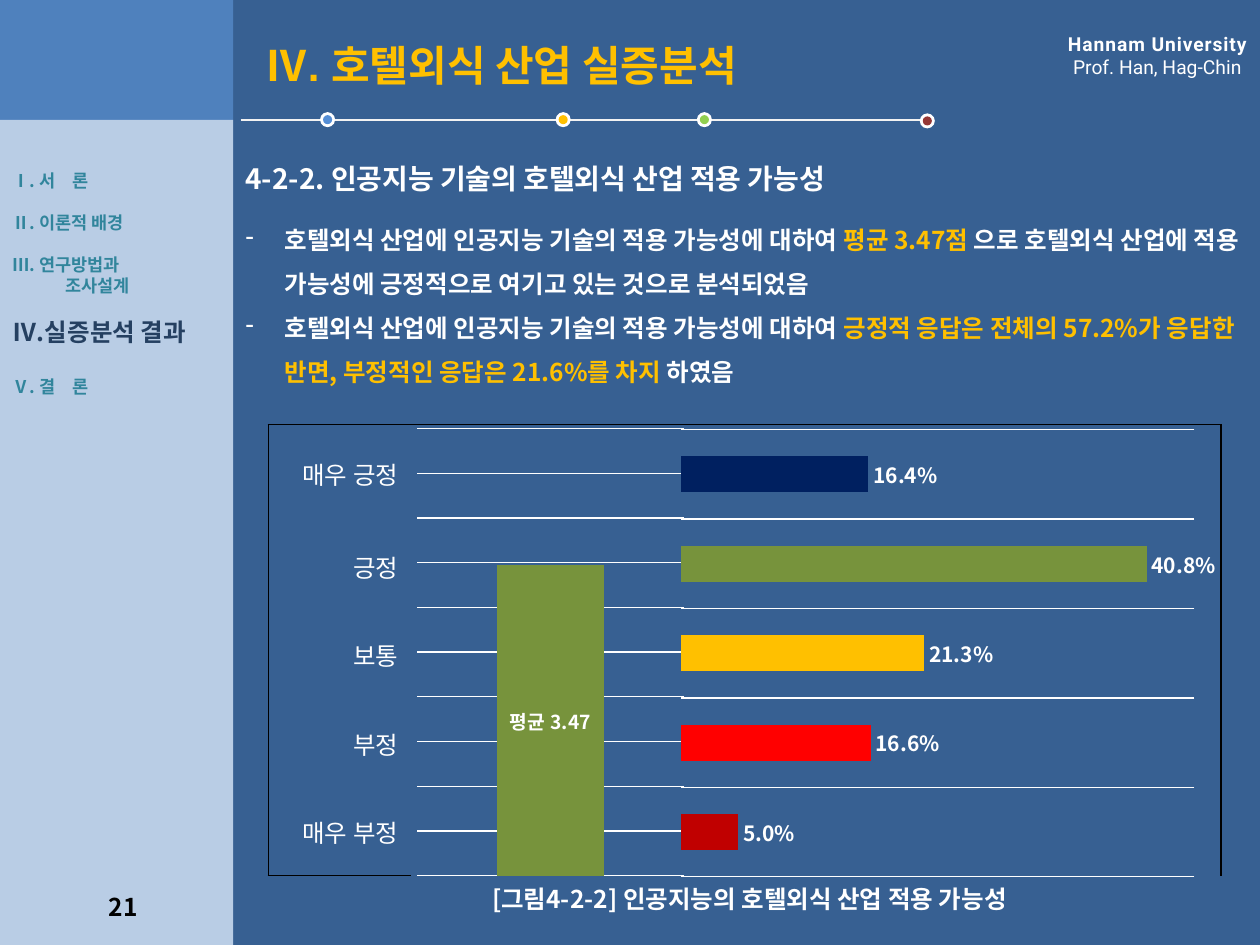
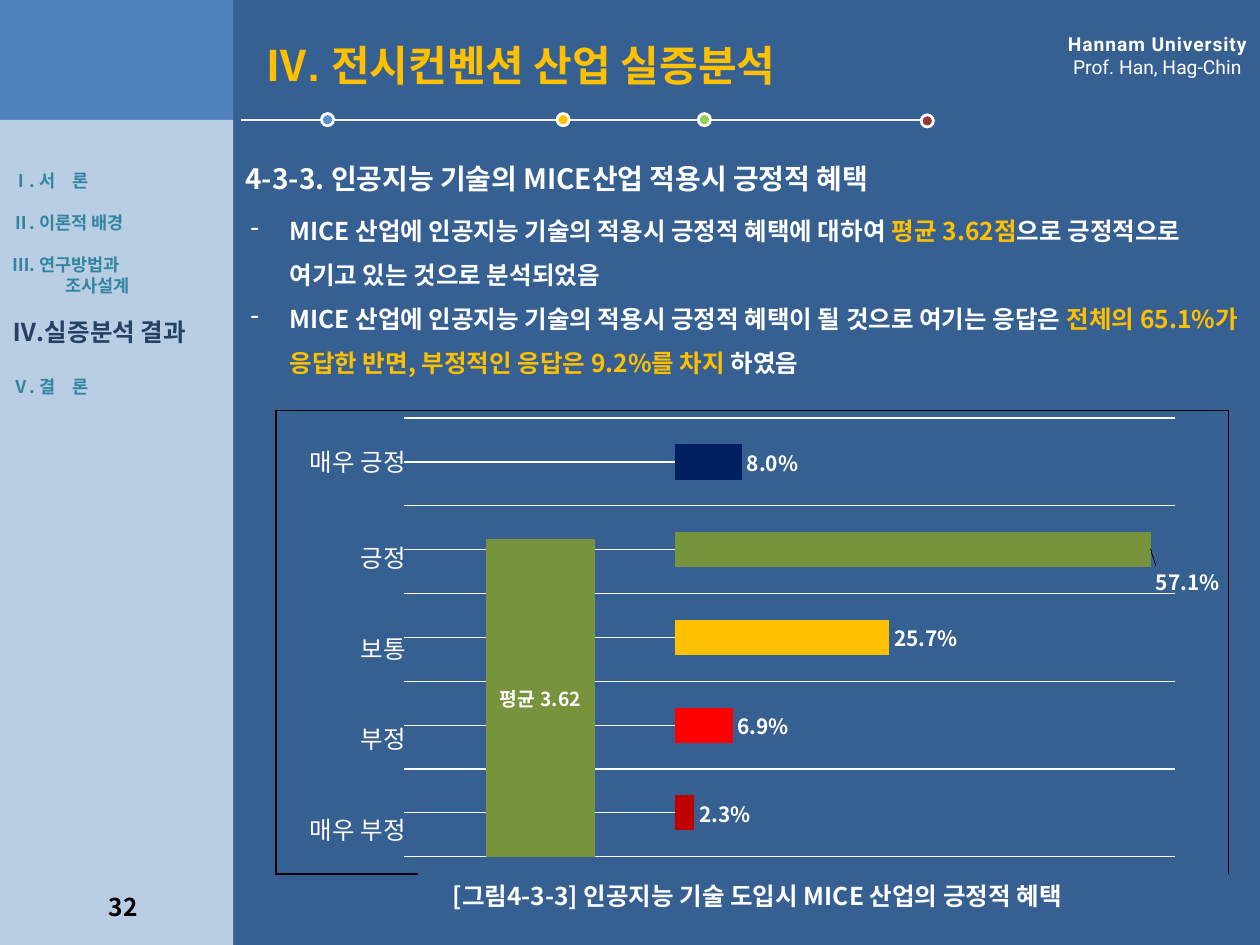
from lxml.etree import SubElement
from pptx import Presentation
from pptx.chart.data import CategoryChartData
from pptx.dml.color import RGBColor
from pptx.enum.chart import XL_CHART_TYPE, XL_LABEL_POSITION
from pptx.enum.shapes import MSO_CONNECTOR, MSO_SHAPE
from pptx.enum.text import MSO_ANCHOR, MSO_AUTO_SIZE, PP_ALIGN
from pptx.oxml import parse_xml
from pptx.oxml.ns import nsdecls, qn
from pptx.util import Pt

WHITE = RGBColor(0xFF, 0xFF, 0xFF)
BLACK = RGBColor(0, 0, 0)
PANEL = RGBColor(0x37, 0x60, 0x92)
CORNER = RGBColor(0x4F, 0x81, 0xBD)
SIDEBAR = RGBColor(0xB9, 0xCD, 0xE5)
RULE = RGBColor(0xF2, 0xF2, 0xF2)
GOLD = RGBColor(0xFF, 0xC0, 0x00)
TEAL = RGBColor(0x31, 0x85, 0x9C)
NAVY = RGBColor(0x25, 0x40, 0x61)
BLUE_DOT = RGBColor(0x55, 0x8E, 0xD5)
GREEN_DOT = RGBColor(0x92, 0xD0, 0x50)
RED_DOT = RGBColor(0x95, 0x37, 0x35)
OLIVE = RGBColor(0x77, 0x93, 0x3C)
ANSWER_COLORS = (RGBColor(0xC0, 0, 0), RGBColor(0xFF, 0, 0), GOLD, OLIVE,
                 RGBColor(0, 0x20, 0x60))
ANSWERS = ("매우 긍정", "긍정", "보통", "부정", "매우 부정")
# text, size, colour, space before, left margin, first-line indent
AGENDA = (
    ("Ⅰ. 서　론", 10, TEAL, 0, 27.4, -27.4),
    ("Ⅱ. 이론적 배경", 10, TEAL, 12, 27.4, -27.4),
    ("Ⅲ. 연구방법과", 10, TEAL, 12, 27.4, -27.4),
    ("조사설계", 10, TEAL, 0, 30.5, 0),
    ("Ⅳ.실증분석 결과", 14, NAVY, 12, 27.4, -27.4),
    ("Ⅴ. 결　론", 10, TEAL, 17, 27.4, -27.4),
)
DOTS = ((187.2, 68.4, BLUE_DOT), (321.8, 68.4, GOLD),
        (402.5, 68.4, GREEN_DOT), (529.9, 69.1, RED_DOT))
KOREAN_FONT = "Noto Sans CJK KR"
NO_GRID_STYLE = "{2D5ABB26-0587-4C30-8999-92F81FD0307C}"

SLIDES = (
    dict(
        number="21", title="호텔외식 산업 실증분석",
        heading="4-2-2. 인공지능 기술의 호텔외식 산업 적용 가능성",
        body_box=(133.2, 116.6, 586.8, 113),
        body=(
            ("호텔외식 산업에 인공지능 기술의 적용 가능성에 대하여 ", "평균 3.47점 ",
             "으로 호텔외식 산업에 적용 가능성에 긍정적으로 여기고 있는 것으로 분석되었음"),
            ("호텔외식 산업에 인공지능 기술의 적용 가능성에 대하여 ",
             "긍정적 응답은 전체의 57.2%가 응답한 반면, 부정적인 응답은 21.6%를 차지 ",
             "하였음")),
        table_at=(153.4, 242.6), rows=(56.2, 50.4),
        mean=3.47, mean_box=(235.4, 239.8, 159.1, 265.7),
        shares=(0.05, 0.166, 0.213, 0.408, 0.164), share_maximum=0.45,
        share_box=(383.8, 240.5, 311, 265.7), share_width=0.943,
        lowered_label=None,
        caption="[그림4-2-2] 인공지능의 호텔외식 산업 적용 가능성",
        caption_at=(156.2, 502.6)),
    dict(
        number="32", title="전시컨벤션 산업 실증분석",
        heading="4-3-3. 인공지능 기술의 MICE산업 적용시 긍정적 혜택",
        body_box=(136.1, 111.6, 583.9, 118.8),
        body=(
            ("MICE 산업에 인공지능 기술의 적용시 긍정적 혜택에 대하여 ", "평균 3.62점",
             "으로 긍정적으로 여기고 있는 것으로 분석되었음"),
            ("MICE 산업에 인공지능 기술의 적용시 긍정적 혜택이 될 것으로 여기는 응답은 ",
             "전체의 65.1%가 응답한 반면, 부정적인 응답은 9.2%를 차지 ", "하였음")),
        table_at=(157.7, 234.7), rows=(57.6, 51.8),
        mean=3.62, mean_box=(228.2, 234, 162, 260.6),
        shares=(0.023, 0.069, 0.257, 0.571, 0.08), share_maximum=0.6,
        share_box=(380.2, 234, 316.8, 260.6), share_width=0.909,
        lowered_label=3,
        caption="[그림4-3-3] 인공지능 기술 도입시 MICE 산업의 긍정적 혜택",
        caption_at=(160.6, 500.4)),
)


def points(values):
    return [Pt(value) for value in values]


def manual_layout(fields):
    """Chart layout element; fields are (tag, value) pairs in schema order."""
    inner = "".join(f'<c:{tag} val="{value}"/>' for tag, value in fields)
    return parse_xml(f'<c:layout {nsdecls("c")}><c:manualLayout>{inner}'
                     '</c:manualLayout></c:layout>')


class Deck:
    def __init__(self):
        self.presentation = Presentation()
        self.presentation.slide_width = Pt(720)
        self.presentation.slide_height = Pt(540)
        self.slide = None

    def new_slide(self):
        self.slide = self.presentation.slides.add_slide(
            self.presentation.slide_layouts[5])

    def shape(self, kind, box, color):
        shape = self.slide.shapes.add_shape(kind, *points(box))
        shape.shadow.inherit = False
        shape.fill.solid()
        shape.fill.fore_color.rgb = color
        shape.line.fill.background()

    def run(self, paragraph, text, size, color, bold=True, font=KOREAN_FONT):
        run = paragraph.add_run()
        run.text = text
        run.font.size = Pt(size)
        run.font.bold = bold
        run.font.color.rgb = color
        run.font.name = font
        properties = run.font._element
        SubElement(properties, qn("a:ea")).set("typeface", font)
        return run

    def text_box(self, box, anchor=MSO_ANCHOR.TOP):
        frame = self.slide.shapes.add_textbox(*points(box)).text_frame
        frame.word_wrap = True
        frame.vertical_anchor = anchor
        return frame

    def line_of_text(self, box, text, size, color, align=PP_ALIGN.LEFT,
                     anchor=MSO_ANCHOR.TOP):
        paragraph = self.text_box(box, anchor).paragraphs[0]
        paragraph.alignment = align
        self.run(paragraph, text, size, color)

    def indent(self, paragraph, left, first):
        properties = paragraph._p.get_or_add_pPr()
        properties.set("marL", str(Pt(left)))
        properties.set("indent", str(Pt(first)))
        return properties

    def paragraph(self, frame, index):
        return frame.add_paragraph() if index else frame.paragraphs[0]

    def frame(self, number):
        """Panels, sidebar agenda, dotted rule, header and page number."""
        self.shape(MSO_SHAPE.RECTANGLE, (133.2, 0, 586.8, 540), PANEL)
        self.shape(MSO_SHAPE.RECTANGLE, (0, 0, 133.2, 68.6), CORNER)
        self.shape(MSO_SHAPE.RECTANGLE, (0, 68.6, 133.2, 471.4), SIDEBAR)
        self.line_of_text((50.4, 506.2, 40.3, 22.3), number, 14, BLACK,
                          PP_ALIGN.CENTER)
        header = self.text_box((584, 15.1, 154.8, 33.8))
        for index, (text, bold) in enumerate(
                (("Hannam University", True), ("Prof. Han, Hag-Chin", False))):
            paragraph = self.paragraph(header, index)
            paragraph.alignment = PP_ALIGN.CENTER
            run = self.run(paragraph, text, 11, WHITE, bold, "Roboto")
            if bold:
                run.font._element.set("spc", "50")
        rule = self.slide.shapes.add_connector(
            MSO_CONNECTOR.STRAIGHT, *points((137.5, 68.4, 528.5, 68.4)))
        rule.line.color.rgb = RULE
        rule.line.width = Pt(1.25)
        SubElement(rule._element.spPr, qn("a:effectLst"))
        for x, y, color in DOTS:
            for size, fill in ((8.6, WHITE), (5.2, color)):
                self.shape(MSO_SHAPE.OVAL,
                           (x - size / 2, y - size / 2, size, size), fill)
        agenda = self.text_box((0, 71.3, 133.2, 181.4), MSO_ANCHOR.MIDDLE)
        for index, (text, size, color, before, left, first) in enumerate(AGENDA):
            paragraph = self.paragraph(agenda, index)
            self.indent(paragraph, left, first)
            if before:
                paragraph.space_before = Pt(before)
            self.run(paragraph, text, size, color)

    def title(self, text):
        title = self.slide.shapes.title
        title.left, title.top, title.width, title.height = points(
            (144.7, 18.7, 391, 36))
        self.slide.shapes._spTree.append(title._element)  # above the panel
        frame = title.text_frame
        frame.auto_size = MSO_AUTO_SIZE.NONE
        frame.vertical_anchor = MSO_ANCHOR.TOP
        paragraph = frame.paragraphs[0]
        paragraph.alignment = PP_ALIGN.LEFT
        for part, font in (("Ⅳ", "Noto Sans CJK JP"), (". ", "Arial"),
                           (text, KOREAN_FONT)):
            self.run(paragraph, part, 24, GOLD, font=font)

    def findings(self, box, items):
        frame = self.text_box(box)
        for index, parts in enumerate(items):
            paragraph = self.paragraph(frame, index)
            properties = self.indent(paragraph, 22.3, -22.3)
            SubElement(properties, qn("a:buChar")).set("char", "-")
            paragraph.line_spacing = 1.5
            for part, color in zip(parts, (WHITE, GOLD, WHITE)):
                self.run(paragraph, part, 14, color)

    def border(self, cell, sides):
        properties = cell._tc.get_or_add_tcPr()
        for position, side in enumerate(sides):
            properties.insert(position, parse_xml(
                f'<a:ln{side} {nsdecls("a")} w="12700"><a:solidFill>'
                f'<a:srgbClr val="{BLACK}"/></a:solidFill></a:ln{side}>'))

    def answer_table(self, at, rows):
        first, other = rows
        columns = (81.4, 167, 295.9)
        box = (*at, sum(columns), first + 4 * other)
        table = self.slide.shapes.add_table(5, 3, *points(box)).table
        table.first_row = table.horz_banding = False
        table._tbl.tblPr.find(qn("a:tableStyleId")).text = NO_GRID_STYLE
        for column, width in zip(table.columns, columns):
            column.width = Pt(width)
        for index, answer in enumerate(ANSWERS):
            table.rows[index].height = Pt(other if index else first)
            cell = table.cell(index, 0)
            cell.vertical_anchor = MSO_ANCHOR.MIDDLE
            paragraph = cell.text_frame.paragraphs[0]
            paragraph.alignment = PP_ALIGN.RIGHT
            self.run(paragraph, answer, 14, WHITE, False)
            for column in range(3):
                cell = table.cell(index, column)
                cell.fill.background()
                sides = (("L", column == 0), ("R", column == 2),
                         ("T", index == 0), ("B", index == 4))
                self.border(cell, [side for side, outer in sides if outer])
        for column in (1, 2):
            table.cell(0, column).merge(table.cell(4, column))

    def chart(self, kind, box, name, values, colors, number_format, maximum,
              plot_width, label_size):
        data = CategoryChartData(number_format=number_format)
        data.categories = [str(index + 1) for index in range(len(values))]
        data.add_series(name, values)
        chart = self.slide.shapes.add_chart(kind, *points(box), data).chart
        chart.has_legend = chart.has_title = False
        chart.font.size = Pt(10)
        chart.font.name = KOREAN_FONT
        chart.font.color.rgb = BLACK
        chart.value_axis.minimum_scale = 0
        chart.value_axis.maximum_scale = maximum
        for axis in (chart.category_axis, chart.value_axis):
            axis.visible = False
            axis.has_major_gridlines = False
        plot = chart.plots[0]
        plot.gap_width = 150
        plot.vary_by_categories = False
        series = plot.series[0]
        for index, color in enumerate(colors):
            fill = series.points[index].format.fill
            fill.solid()
            fill.fore_color.rgb = color
        labels = series.data_labels
        labels.show_value = True
        labels.number_format = number_format
        labels.number_format_is_linked = False
        self.label_font(labels.font, label_size)
        area = chart._chartSpace.chart.plotArea
        for layout in area.findall(qn("c:layout")):
            area.remove(layout)
        area.insert(0, manual_layout((
            ("layoutTarget", "inner"), ("xMode", "edge"), ("yMode", "edge"),
            ("x", 0.018), ("y", 0.019), ("w", plot_width), ("h", 0.962))))
        return chart, series

    def label_font(self, font, size):
        font.size = Pt(size)
        font.bold = True
        font.color.rgb = WHITE
        font.name = KOREAN_FONT

    def gridlines(self, axis):
        axis.has_major_gridlines = True
        line = axis.major_gridlines.format.line
        line.color.rgb = WHITE
        line.width = Pt(0.75)

    def mean_chart(self, box, mean):
        chart, series = self.chart(
            XL_CHART_TYPE.COLUMN_CLUSTERED, box, "평균", [mean], [OLIVE],
            "General", 5, 0.96, 11)
        chart.value_axis.major_unit = 0.5
        self.gridlines(chart.value_axis)
        labels = series.data_labels
        labels.show_series_name = True
        labels.position = XL_LABEL_POSITION.CENTER
        separator = parse_xml(f'<c:separator {nsdecls("c")}> </c:separator>')
        labels._element.find(qn("c:showBubbleSize")).addnext(separator)

    def share_chart(self, box, shares, maximum, plot_width, lowered_label):
        chart, series = self.chart(
            XL_CHART_TYPE.BAR_CLUSTERED, box, "Series 1", shares,
            ANSWER_COLORS, "0.0%", maximum, plot_width, 12)
        self.gridlines(chart.category_axis)
        series.data_labels.position = XL_LABEL_POSITION.OUTSIDE_END
        if lowered_label is not None:
            label = series.points[lowered_label].data_label
            self.label_font(label.font, 12)
            label.position = XL_LABEL_POSITION.OUTSIDE_END
            element = label._get_or_add_dLbl()
            element.insert(1, manual_layout((("x", 0), ("y", 0.07))))


def main():
    deck = Deck()
    for content in SLIDES:
        deck.new_slide()
        deck.frame(content["number"])
        deck.title(content["title"])
        deck.line_of_text((133.2, 88.6, 586.8, 26.6), content["heading"], 16, WHITE)
        deck.findings(content["body_box"], content["body"])
        deck.answer_table(content["table_at"], content["rows"])
        deck.mean_chart(content["mean_box"], content["mean"])
        deck.share_chart(content["share_box"], content["shares"],
                         content["share_maximum"], content["share_width"],
                         content["lowered_label"])
        deck.line_of_text((*content["caption_at"], 544.3, 22.3), content["caption"],
                          14, WHITE, PP_ALIGN.CENTER, MSO_ANCHOR.MIDDLE)
    deck.presentation.save("out.pptx")


if __name__ == "__main__":
    main()
